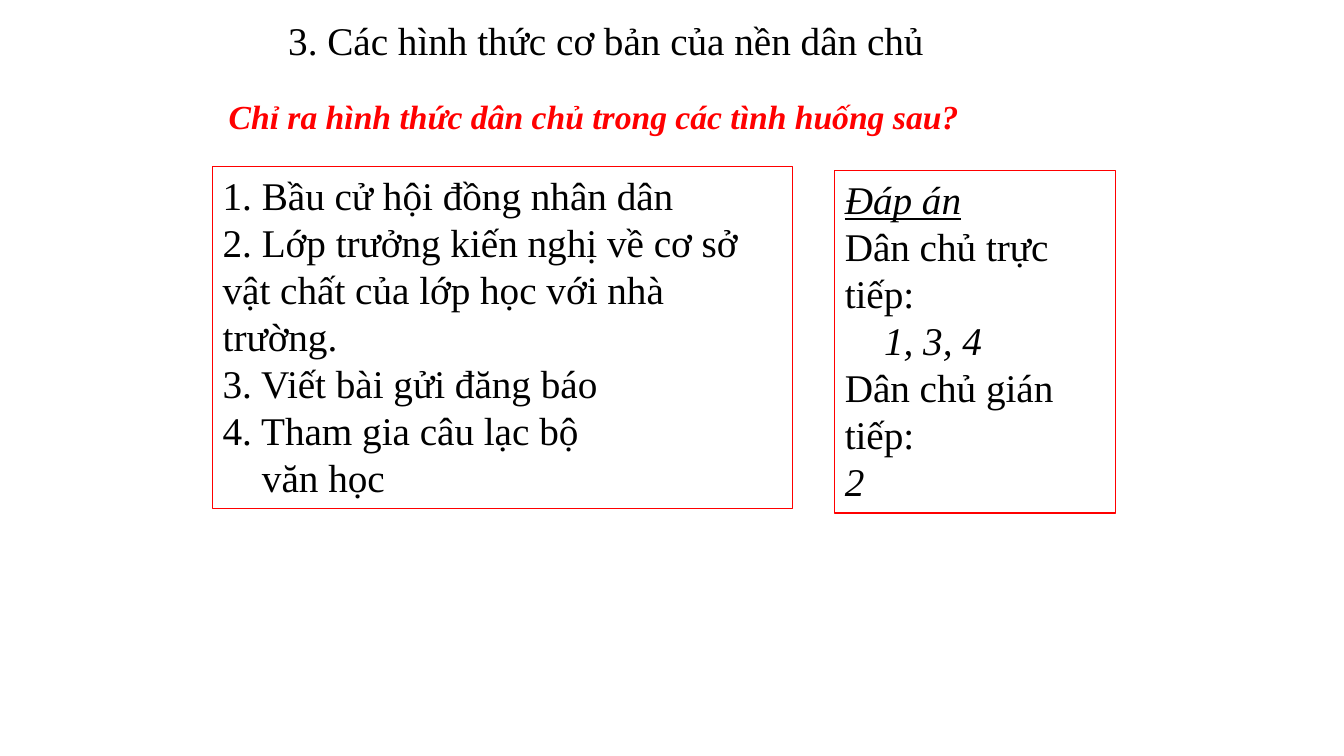
from pptx import Presentation, util as u
from pptx.dml.color import RGBColor
from pptx.enum import text

FONT, RED, BLACK = "Times New Roman", "FF0000", "000000"
INDENT = 0.39
ITALIC = {"italic": True}

# Each line: wording, font settings, left indent in inches
TASKS = [
    ("1. Bầu cử hội đồng nhân dân", {}, 0),
    ("2. Lớp trưởng kiến nghị về cơ sở vật chất của lớp học với nhà trường.", {}, 0),
    ("3. Viết bài gửi đăng báo", {}, 0),
    ("4. Tham gia câu lạc bộ", {}, 0),
    ("văn học", {}, INDENT),
]
ANSWERS = [
    ("Đáp án", {"italic": True, "underline": True}, 0),
    ("Dân chủ trực tiếp:", {}, 0),
    ("1, 3, 4", ITALIC, INDENT),
    ("Dân chủ gián tiếp:", {}, 0),
    ("2", ITALIC, 0),
]
PROMPT = [("Chỉ ra hình thức dân chủ trong các tình huống sau?",
           {"bold": True, "italic": True}, 0)]
HEADING = [("3. Các hình thức cơ bản của nền dân chủ", {}, 0)]

# Lines, place (left, top, width, height), size, colour, framed
BOXES = [
    (PROMPT, (2.17, 0.89, 9.5, 0.53), 24, RED, False),
    (TASKS, (2.11, 1.65, 5.75, 3.4), 28, BLACK, True),
    (ANSWERS, (8.28, 1.69, 2.78, 3.4), 28, BLACK, True),
    (HEADING, (2.76, 0.11, 8.29, 1.04), 28, BLACK, False),
]


def color(code):
    return RGBColor.from_string(code)


def add_box(slide, lines, place, size, tint, framed):
    box = slide.shapes.add_textbox(*map(u.Inches, place))
    if framed:
        box.line.color.rgb = color(RED)
        box.line.width = u.Pt(0.75)
    frame = box.text_frame
    frame.word_wrap = True
    if lines is PROMPT:
        frame.vertical_anchor = text.MSO_ANCHOR.MIDDLE
    for i, (words, style, indent) in enumerate(lines):
        para = frame.add_paragraph() if i else frame.paragraphs[0]
        para.text = words
        font = para.font
        font.name, font.size = FONT, u.Pt(size)
        font.color.rgb = color(tint)
        for key, value in style.items():
            setattr(font, key, value)
        if indent:
            para._p.get_or_add_pPr().set("marL", str(u.Inches(indent)))


def main():
    deck = Presentation()
    deck.slide_width, deck.slide_height = u.Inches(13.33), u.Inches(7.5)
    slide = deck.slides.add_slide(deck.slide_layouts[6])
    for box in BOXES:
        add_box(slide, *box)
    deck.save("out.pptx")


if __name__ == "__main__":
    main()
